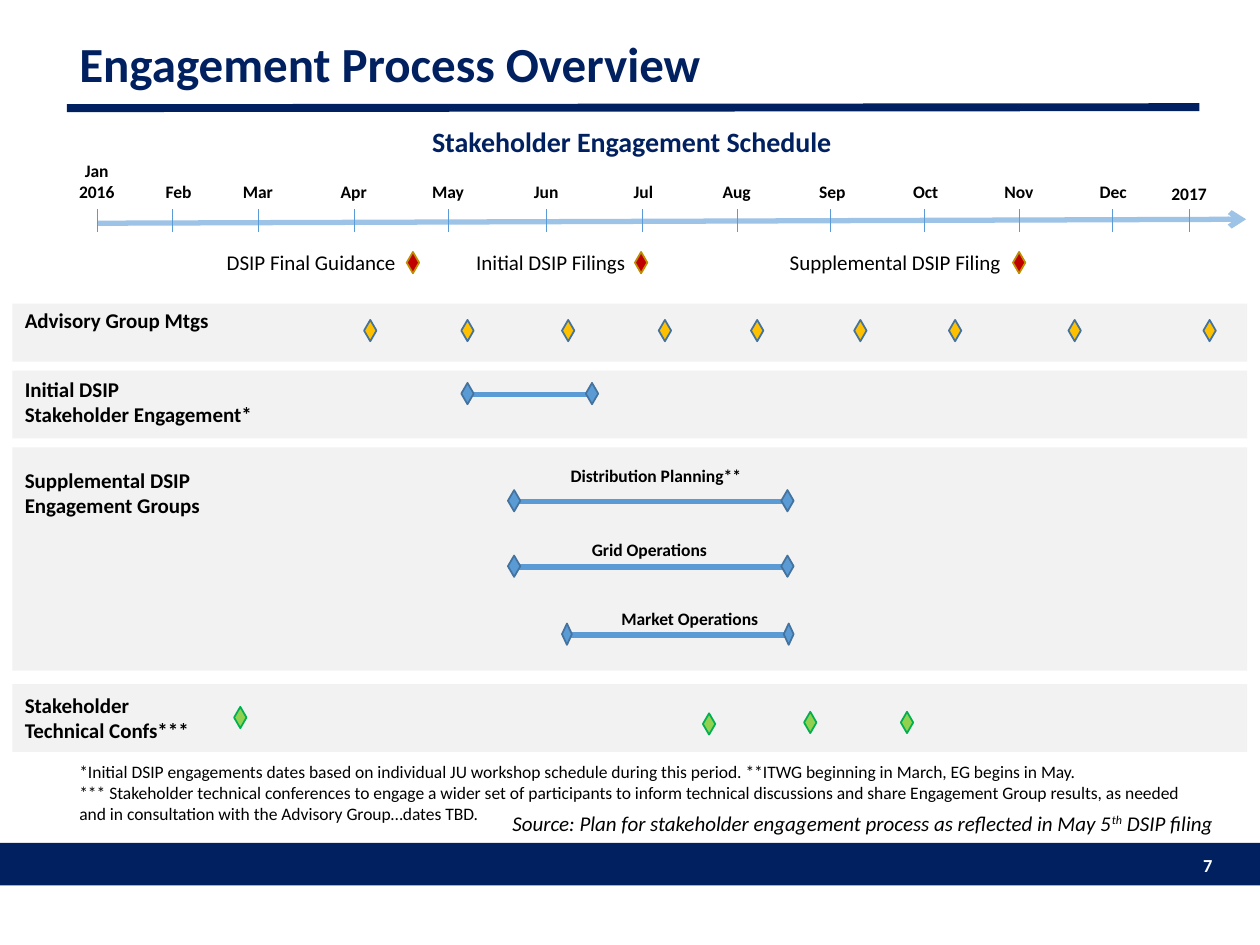
"""Build the stakeholder engagement schedule slide."""
import dataclasses

import lxml.etree
import pptx
import pptx.dml.color
import pptx.enum.shapes
import pptx.enum.text
import pptx.oxml.ns
import pptx.util

Cm = pptx.util.Cm
ALIGN = pptx.enum.text.PP_ALIGN


@dataclasses.dataclass(frozen=True)
class Theme:
    """Colours and type sizes of the slide."""
    font: str = "Calibri"
    navy: str = "002060"
    white: str = "FFFFFF"
    black: str = "000000"
    band: str = "F2F2F2"
    axis: str = "9DC3E6"
    blue: str = "5B9BD5"
    filing: tuple = ("C00000", "BD8E00")
    meeting: tuple = ("FFC000", "43739E")
    span: tuple = ("5B9BD5", "43739E")
    conference: tuple = ("92D050", "00B050")
    title: float = 28
    subtitle: float = 16
    body: float = 12
    page: float = 10.5
    small: float = 10


THEME = Theme()

MONTHS = [
    ("Jan 2016", 1.96, 1.3, 3.1, 1.12), ("Feb", 3.48, 2.95, 3.53, 0.69),
    ("Mar", 5.21, 4.55, 3.53, 0.69), ("Apr", 7.14, 6.48, 3.53, 0.69),
    ("May", 9.04, 8.38, 3.53, 0.69), ("Jun", 11.02, 10.36, 3.53, 0.69),
    ("Jul", 12.95, 12.32, 3.53, 0.69), ("Aug", 14.86, 14.2, 3.53, 0.69),
    ("Sep", 16.74, 16.13, 3.53, 0.69), ("Oct", 18.64, 18.01, 3.53, 0.69),
    ("Nov", 20.55, 19.89, 3.53, 0.69), ("Dec", 22.43, 21.79, 3.53, 0.69),
    ("2017", 23.98, 23.32, 3.56, 0.69),
]
FILINGS = [
    ("DSIP Final Guidance", 4.32, 3.96, 8.2),
    ("Initial DSIP Filings", 9.35, 3.56, 12.8),
    ("Supplemental DSIP Filing", 15.67, 4.98, 20.42),
]
BANDS = [
    ("Advisory Group Mtgs", 6.12, 1.17, 6.07, 4.27, 0.76),
    ("Initial DSIP\nStakeholder Engagement*", 7.47, 1.37, 7.47, 5.16, 1.27),
    ("Supplemental DSIP\nEngagement Groups", 9.02, 4.5, 9.3, 4.09, 1.27),
    ("Stakeholder\nTechnical Confs***", 13.79, 1.37, 13.84, 3.86, 1.27),
]
MEETINGS = [7.34, 9.3, 11.33, 13.28, 15.14, 17.22, 19.13, 21.54, 24.26]
CONFERENCES = [(4.72, 14.25), (14.17, 14.38), (16.21, 14.35), (18.16, 14.35)]
WORKING_GROUPS = [
    ("Distribution Planning**", (11.05, 9.25, 4.34, 0.69), 10.24, 15.75, 9.88, 0.25),
    ("Grid Operations", (10.92, 10.74, 4.34, 0.69), 10.24, 15.75, 11.2, 0.25),
    ("Market Operations", (12.14, 12.14, 3.53, 0.69), 11.33, 15.8, 12.57, 0.2),
]
NOTES = (
    "*Initial DSIP engagements dates based on individual JU workshop schedule "
    "during this period. **ITWG beginning in March, EG begins in May.\n"
    "*** Stakeholder technical conferences to engage a wider set of participants "
    "to inform technical discussions and share Engagement Group results, as needed "
    "and in consultation with the Advisory Group…dates TBD."
)


def rgb(code):
    """Turn a hex code into a colour."""
    return pptx.dml.color.RGBColor.from_string(code)


def add_text(canvas, text, box, size=THEME.body, color=THEME.black, bold=False,
             italic=False, align=ALIGN.LEFT, wrap=True, grow=True,
             anchor=pptx.enum.text.MSO_ANCHOR.TOP, spacing=None):
    """Add text with one paragraph per line and superscripts between carets."""
    frame = canvas.add_textbox(*map(Cm, box)).text_frame
    frame.word_wrap = wrap
    frame.vertical_anchor = anchor
    if grow:
        frame.auto_size = pptx.enum.text.MSO_AUTO_SIZE.SHAPE_TO_FIT_TEXT
    for index, line in enumerate(text.split("\n")):
        paragraph = frame.add_paragraph() if index else frame.paragraphs[0]
        paragraph.alignment = align
        paragraph.line_spacing = spacing
        for position, piece in enumerate(line.split("^")):
            run = paragraph.add_run()
            run.text = piece
            run.font.name = THEME.font
            run.font.size = pptx.util.Pt(size)
            run.font.bold = bold
            run.font.italic = italic
            run.font.color.rgb = rgb(color)
            if position % 2:
                run.font._element.set("baseline", "30000")


def add_shape(canvas, preset, box, fill, outline=None):
    """Add a flat preset shape with an optional outline."""
    shape = canvas.add_shape(preset, *map(Cm, box))
    shape.shadow.inherit = False
    shape.fill.solid()
    shape.fill.fore_color.rgb = rgb(fill)
    if outline:
        shape.line.color.rgb = rgb(outline)
        shape.line.width = pptx.util.Pt(1)
    else:
        shape.line.fill.background()


def add_bar(canvas, box):
    """Add a grey schedule band."""
    add_shape(canvas, pptx.enum.shapes.MSO_SHAPE.RECTANGLE, box, THEME.band)


def add_milestone(canvas, left, top, colors, width=0.25):
    """Add a diamond in a fill and outline pair."""
    add_shape(canvas, pptx.enum.shapes.MSO_SHAPE.FLOWCHART_DECISION,
              (left, top, width, 0.43), *colors)


def add_line(canvas, ends, color, weight, arrow=False):
    """Add a flat straight line with an optional arrowhead."""
    line = canvas.add_connector(pptx.enum.shapes.MSO_CONNECTOR.STRAIGHT, *map(Cm, ends))
    line.line.color.rgb = rgb(color)
    line.line.width = pptx.util.Pt(weight)
    qn = pptx.oxml.ns.qn
    properties = line._element.spPr
    if arrow:
        lxml.etree.SubElement(properties.find(qn("a:ln")), qn("a:tailEnd"), type="arrow")
    lxml.etree.SubElement(properties, qn("a:effectLst"))


def add_span(canvas, start, end, top, width=0.25):
    """Add a period between two milestones."""
    middle = top + 0.23
    add_line(canvas, (start + width / 2, middle, end + width / 2, middle), THEME.blue, 3)
    for left in (start, end):
        add_milestone(canvas, left, top, THEME.span, width)


def add_frame(canvas):
    """Add the title, its rule and the footer."""
    add_shape(canvas, pptx.enum.shapes.MSO_SHAPE.RECTANGLE,
              (0, 16.99, 25.4, 0.86), THEME.navy)
    add_text(canvas, "7", (23.65, 17.09, 1.04, 0.74), size=THEME.page,
             color=THEME.white, bold=True, align=ALIGN.RIGHT)
    add_line(canvas, (1.35, 2.18, 24.18, 2.16), THEME.navy, 4.5)
    add_text(canvas, "Engagement Process Overview", (1.35, 0.64, 22.83, 1.4),
             size=THEME.title, color=THEME.navy, bold=True, grow=False,
             anchor=pptx.enum.text.MSO_ANCHOR.MIDDLE, spacing=0.9)


def add_timeline(canvas):
    """Add the month axis and the filing dates."""
    add_text(canvas, "Stakeholder Engagement Schedule", (8.46, 2.39, 10.59, 0.94),
             size=THEME.subtitle, color=THEME.navy, bold=True)
    add_line(canvas, (1.96, 4.5, 25.12, 4.42), THEME.axis, 3, arrow=True)
    for month, tick, left, top, height in MONTHS:
        add_line(canvas, (tick, 4.22, tick, 4.67), THEME.blue, 0.5)
        add_text(canvas, month, (left, top, 1.3, height), size=THEME.small,
                 bold=True, align=ALIGN.CENTER)
    for filing, left, width, due in FILINGS:
        add_text(canvas, filing, (left, 4.9, width, 0.76), wrap=False)
        add_milestone(canvas, due, 5.08, THEME.filing)


def add_schedule(canvas):
    """Add the bands with their meetings, periods and conferences."""
    for activity, top, height, label_top, label_width, label_height in BANDS:
        add_bar(canvas, (0.25, top, 24.89, height))
        add_text(canvas, activity, (0.25, label_top, label_width, label_height),
                 bold=True, wrap=False)
    for meeting in MEETINGS:
        add_milestone(canvas, meeting, 6.45, THEME.meeting)
    add_span(canvas, 9.3, 11.81, 7.72)
    for topic, label_box, start, end, top, width in WORKING_GROUPS:
        group = canvas.add_group_shape().shapes
        add_text(group, topic, label_box, size=THEME.small, bold=True, align=ALIGN.CENTER)
        add_span(group, start, end, top, width)
    for left, top in CONFERENCES:
        add_milestone(canvas, left, top, THEME.conference)


def main():
    """Build and save the slide."""
    deck = pptx.Presentation()
    deck.slide_width, deck.slide_height = Cm(25.4), Cm(19.05)
    canvas = deck.slides.add_slide(deck.slide_layouts[6]).shapes
    add_frame(canvas)
    add_timeline(canvas)
    add_schedule(canvas)
    add_text(canvas, NOTES, (1.35, 15.21, 22.91, 1.55), size=THEME.small)
    add_text(canvas, "Source: Plan for stakeholder engagement process as reflected "
             "in May 5^th^ DSIP filing", (10.08, 16.21, 15.06, 0.76), italic=True)
    deck.save("out.pptx")


if __name__ == "__main__":
    main()
